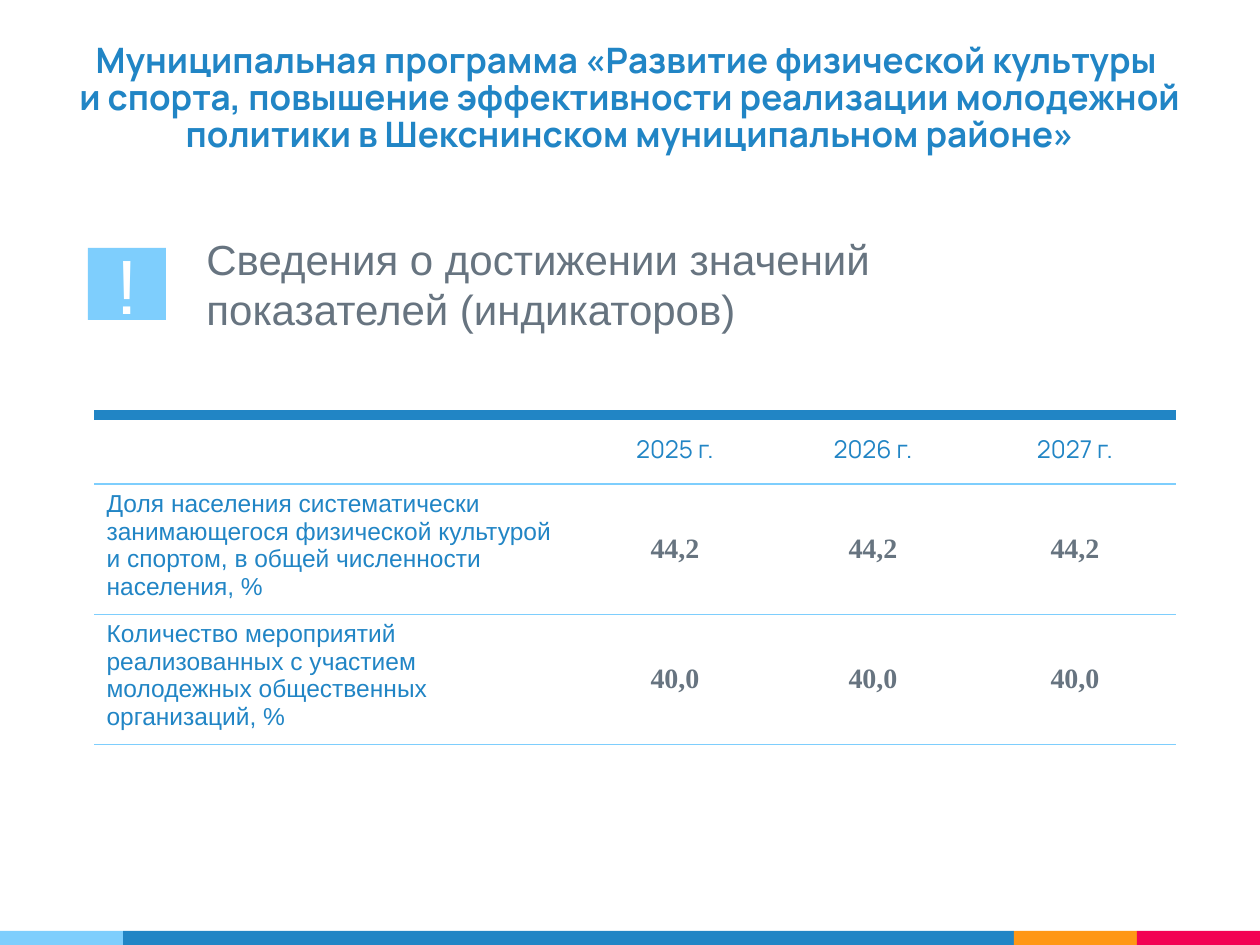
from dataclasses import dataclass
from typing import NamedTuple

from lxml.etree import SubElement as Sub
from pptx import Presentation
from pptx.dml.color import RGBColor as Rgb
from pptx.enum.shapes import MSO_SHAPE as Kind
from pptx.enum.text import MSO_ANCHOR as Anchor, PP_ALIGN as Align
from pptx.oxml.ns import qn
from pptx.util import Emu, Pt

SCALE = 914400 / 126


@dataclass(frozen=True)
class Theme:
    blue: str = "2185C5"
    sky: str = "7ECEFD"
    gold: str = "FF9715"
    red: str = "F20253"
    gray: str = "677480"
    white: str = "FFFFFF"
    sans: str = "Arial"
    head: str = "Manrope"
    serif: str = "Times New Roman"
    small: int = 14
    value: int = 16
    title: int = 20
    lead: int = 24
    mark: int = 44


class Box(NamedTuple):
    left: int
    top: int
    width: int
    height: int


class Band(NamedTuple):
    width: int
    color: str


class Row(NamedTuple):
    label: str
    values: tuple[str, ...]


T = Theme()
BANDS = (Band(123, T.sky), Band(891, T.blue), Band(123, T.gold), Band(123, T.red))
YEARS = ("2025 г.", "2026 г.", "2027 г.")
ROWS = (
    Row("Доля населения систематически занимающегося физической культурой "
        "и спортом, в общей численности населения, %", ("44,2",) * 3),
    Row("Количество мероприятий реализованных с участием молодежных "
        "общественных организаций, %", ("40,0",) * 3),
)
COLS = (484, 194, 202, 202)
HEIGHTS = (69, 123, 123)


def px(n: int) -> Emu:
    return Emu(round(n * SCALE))


def write(frame, text: str, *, size: int, color: str, font: str = T.sans,
          bold: bool = False, align=Align.LEFT, space: float | None = None) -> None:
    para = frame.paragraphs[0]
    para.text = text
    para.alignment = align
    para.line_spacing = space
    for run in para.runs:
        run.font.size = Pt(size)
        run.font.name = font
        run.font.bold = bold
        run.font.color.rgb = Rgb.from_string(color)


def add_text(slide, box: Box, text: str, anchor=Anchor.TOP, **form) -> None:
    frame = slide.shapes.add_textbox(*map(px, box)).text_frame
    frame.word_wrap = True
    frame.vertical_anchor = anchor
    write(frame, text, **form)


def add_rect(slide, box: Box, color: str):
    rect = slide.shapes.add_shape(Kind.RECTANGLE, *map(px, box))
    rect.shadow.inherit = False
    rect.fill.solid()
    rect.fill.fore_color.rgb = Rgb.from_string(color)
    rect.line.fill.background()
    return rect


def set_edge(cell, side: str, color: str = "", width: float = 0) -> None:
    line = Sub(cell._tc.get_or_add_tcPr(), qn(f"a:ln{side}"), w=str(Pt(width)))
    if color:
        Sub(Sub(line, qn("a:solidFill")), qn("a:srgbClr"), val=color)
    else:
        Sub(line, qn("a:noFill"))


def style_cell(cell, first: bool) -> None:
    set_edge(cell, "L")
    set_edge(cell, "R")
    set_edge(cell, "T", T.blue if first else T.sky, 6 if first else 0.75)
    set_edge(cell, "B", T.sky, 0.75)
    cell.fill.background()


def add_grid(slide, left: int, top: int) -> None:
    box = Box(left, top, sum(COLS), sum(HEIGHTS))
    grid = slide.shapes.add_table(len(HEIGHTS), len(COLS), *map(px, box)).table
    grid.first_row = grid.horz_banding = False
    for col, width in zip(grid.columns, COLS):
        col.width = px(width)
    for row, height in zip(grid.rows, HEIGHTS):
        row.height = px(height)
    label = dict(size=T.small, color=T.blue)
    year = dict(label, font=T.head, align=Align.CENTER)
    value = dict(size=T.value, color=T.gray, font=T.serif, bold=True, align=Align.CENTER)
    for r, row in enumerate((Row("", YEARS), *ROWS)):
        for c, text in enumerate((row.label, *row.values)):
            cell = grid.cell(r, c)
            style_cell(cell, r == 0)
            if c:
                cell.vertical_anchor = Anchor.MIDDLE
            form = label if c == 0 else value if r else year
            write(cell.text_frame, text, **form)


def main() -> None:
    deck = Presentation()
    deck.slide_width, deck.slide_height = px(1260), px(945)
    slide = deck.slides.add_slide(deck.slide_layouts[6])
    left = 0
    for band in BANDS:
        add_rect(slide, Box(left, 931, band.width, 14), band.color)
        left += band.width
    add_text(slide, Box(0, 92, 1260, 69),
             "Муниципальная программа «Развитие физической культуры \n"
             "и спорта, повышение эффективности реализации молодежной "
             "политики в Шекснинском муниципальном районе»",
             Anchor.BOTTOM, size=T.title, color=T.blue, font=T.head, bold=True,
             align=Align.CENTER, space=0.88)
    add_grid(slide, 94, 415)
    add_text(slide, Box(194, 227, 761, 115),
             "Сведения о достижении значений показателей (индикаторов)",
             size=T.lead, color=T.gray)
    mark = add_rect(slide, Box(88, 248, 78, 72), T.sky)
    mark.text_frame.vertical_anchor = Anchor.MIDDLE
    write(mark.text_frame, "!", size=T.mark, color=T.white, align=Align.CENTER)
    deck.save("out.pptx")


if __name__ == "__main__":
    main()
